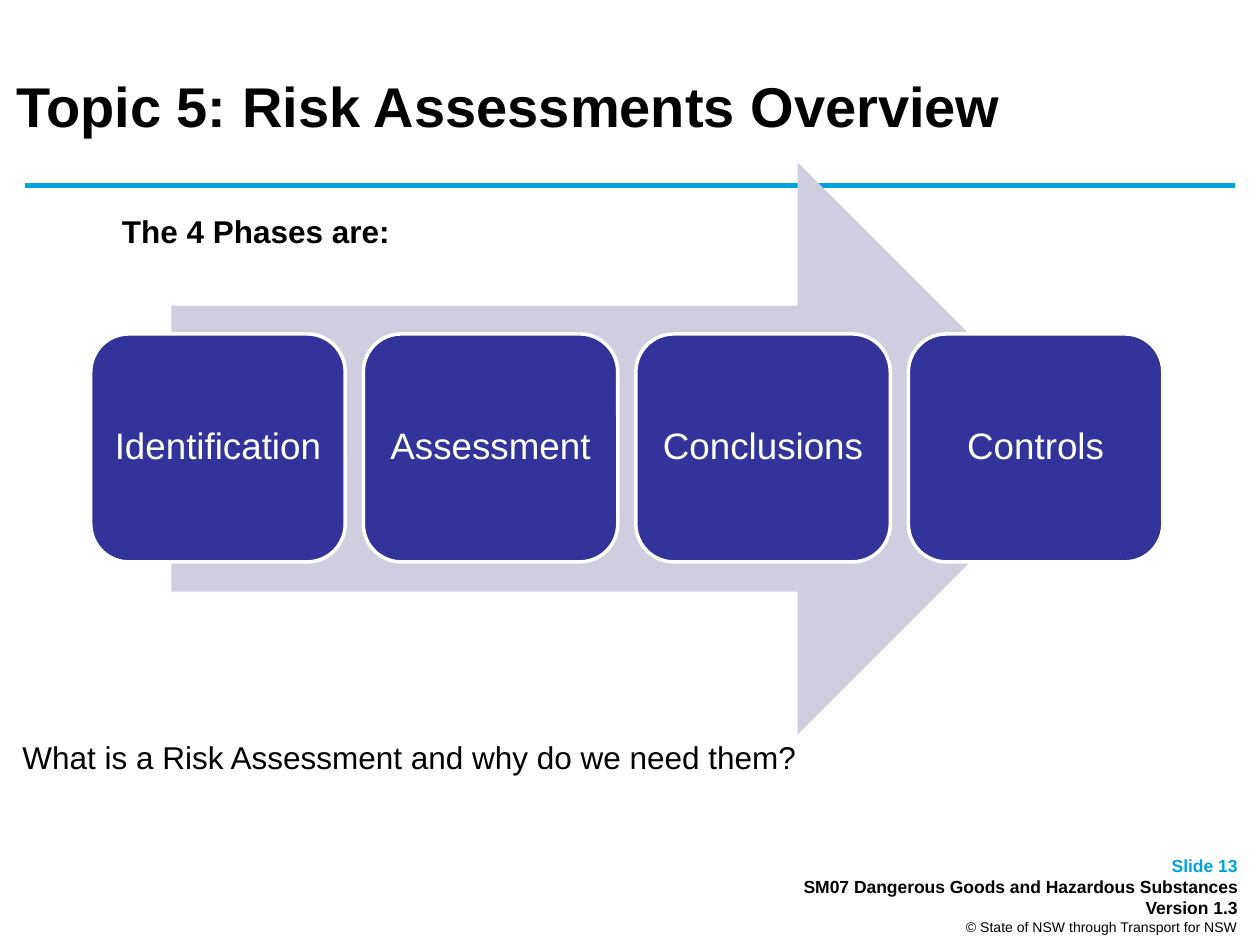
from dataclasses import dataclass

import pptx
import pptx.dml.color
import pptx.enum.shapes
import pptx.enum.text
import pptx.oxml.xmlchemy
import pptx.util

COLUMNS, ROWS = 100, 75
CELL = pptx.util.Inches(0.1)
FONT = "Arial"
BLACK, WHITE, CYAN, NAVY, LILAC = "000000", "FFFFFF", "00A3DE", "333399", "CECEDE"
SHAPE = pptx.enum.shapes.MSO_SHAPE
ALIGN = pptx.enum.text.PP_ALIGN
ANCHOR = pptx.enum.text.MSO_ANCHOR


@dataclass
class Box:
    col: float
    row: float
    cols: float
    rows: float

    def emu(self) -> list[int]:
        return [round(n * CELL) for n in (self.col, self.row, self.cols, self.rows)]


@dataclass
class Line:
    text: str
    size: float
    color: str = BLACK
    bold: bool = False


@dataclass
class TextBlock:
    box: Box
    lines: list[Line]
    align: ALIGN = ALIGN.LEFT
    anchor: ANCHOR = ANCHOR.TOP
    wrap: bool = True


TEXT_BLOCKS = [
    TextBlock(
        Box(55.5, 67.4, 43.7, 7.6),
        [
            Line("Slide 13", 10, CYAN, True),
            Line("SM07 Dangerous Goods and Hazardous Substances", 10, bold=True),
            Line("Version 1.3", 10, bold=True),
            Line("© State of NSW through Transport for NSW", 8),
        ],
        align=ALIGN.RIGHT,
    ),
    TextBlock(
        Box(0.3, 2.1, 92.2, 12.5),
        [Line("Topic 5: Risk Assessments Overview", 32, bold=True)],
        anchor=ANCHOR.MIDDLE,
    ),
    TextBlock(Box(8.7, 16.3, 27.6, 4), [Line("The 4 Phases are:", 18, bold=True)]),
    TextBlock(
        Box(0.8, 58.1, 63.5, 4),
        [Line("What is a Risk Assessment and why do we need them?", 18)],
        wrap=False,
    ),
]
PHASES = ["Identification", "Assessment", "Conclusions", "Controls"]
FIRST_PHASE = Box(7.2, 26.5, 20.2, 18.1)
PHASE_PITCH = 21.63
ARROW = Box(13.6, 12.9, 72.4, 45.4)


def rgb(color: str) -> pptx.dml.color.RGBColor:
    return pptx.dml.color.RGBColor.from_string(color)


def write_lines(tf, lines: list[Line], align: ALIGN) -> None:
    tf.text = "\n".join(line.text for line in lines)
    for p, line in zip(tf.paragraphs, lines):
        p.alignment = align
        for r in p.runs:
            r.font.name = FONT
            r.font.size = pptx.util.Pt(line.size)
            r.font.bold = line.bold
            r.font.color.rgb = rgb(line.color)


def add_text(s, block: TextBlock) -> None:
    tf = s.shapes.add_textbox(*block.box.emu()).text_frame
    tf.word_wrap = block.wrap
    tf.vertical_anchor = block.anchor
    write_lines(tf, block.lines, block.align)


def add_filled(s, kind: SHAPE, box: Box, color: str):
    sp = s.shapes.add_shape(kind, *box.emu())
    sp.shadow.inherit = False
    sp.fill.solid()
    sp.fill.fore_color.rgb = rgb(color)
    sp.line.fill.background()
    return sp


def add_phase(s, index: int, name: str) -> None:
    first = FIRST_PHASE
    box = Box(first.col + index * PHASE_PITCH, first.row, first.cols, first.rows)
    sp = add_filled(s, SHAPE.ROUNDED_RECTANGLE, box, NAVY)
    sp.line.color.rgb = rgb(WHITE)
    sp.line.width = pptx.util.Pt(2)
    tf = sp.text_frame
    tf.word_wrap = True
    tf.vertical_anchor = ANCHOR.MIDDLE
    tf.margin_left = tf.margin_right = 0
    write_lines(tf, [Line(name, 21, WHITE)], ALIGN.CENTER)
    tf.paragraphs[0].line_spacing = 0.9


def add_rule(s, margin: float, row: float) -> None:
    left, top, right, bottom = Box(margin, row, COLUMNS - margin, row).emu()
    rule = s.shapes.add_connector(
        pptx.enum.shapes.MSO_CONNECTOR.STRAIGHT, left, top, right, bottom
    )
    rule.line.color.rgb = rgb(CYAN)
    rule.line.width = pptx.util.Pt(3)
    effects = pptx.oxml.xmlchemy.OxmlElement("a:effectLst")
    rule._element.spPr.append(effects)


def main() -> None:
    prs = pptx.Presentation()
    prs.slide_width, prs.slide_height = COLUMNS * CELL, ROWS * CELL
    s = prs.slides.add_slide(prs.slide_layouts[6])
    footer, title, *captions = TEXT_BLOCKS
    add_text(s, footer)
    add_rule(s, 2, 14.7)
    add_text(s, title)
    add_filled(s, SHAPE.RIGHT_ARROW, ARROW, LILAC)
    for index, name in enumerate(PHASES):
        add_phase(s, index, name)
    for caption in captions:
        add_text(s, caption)
    prs.save("out.pptx")


if __name__ == "__main__":
    main()
